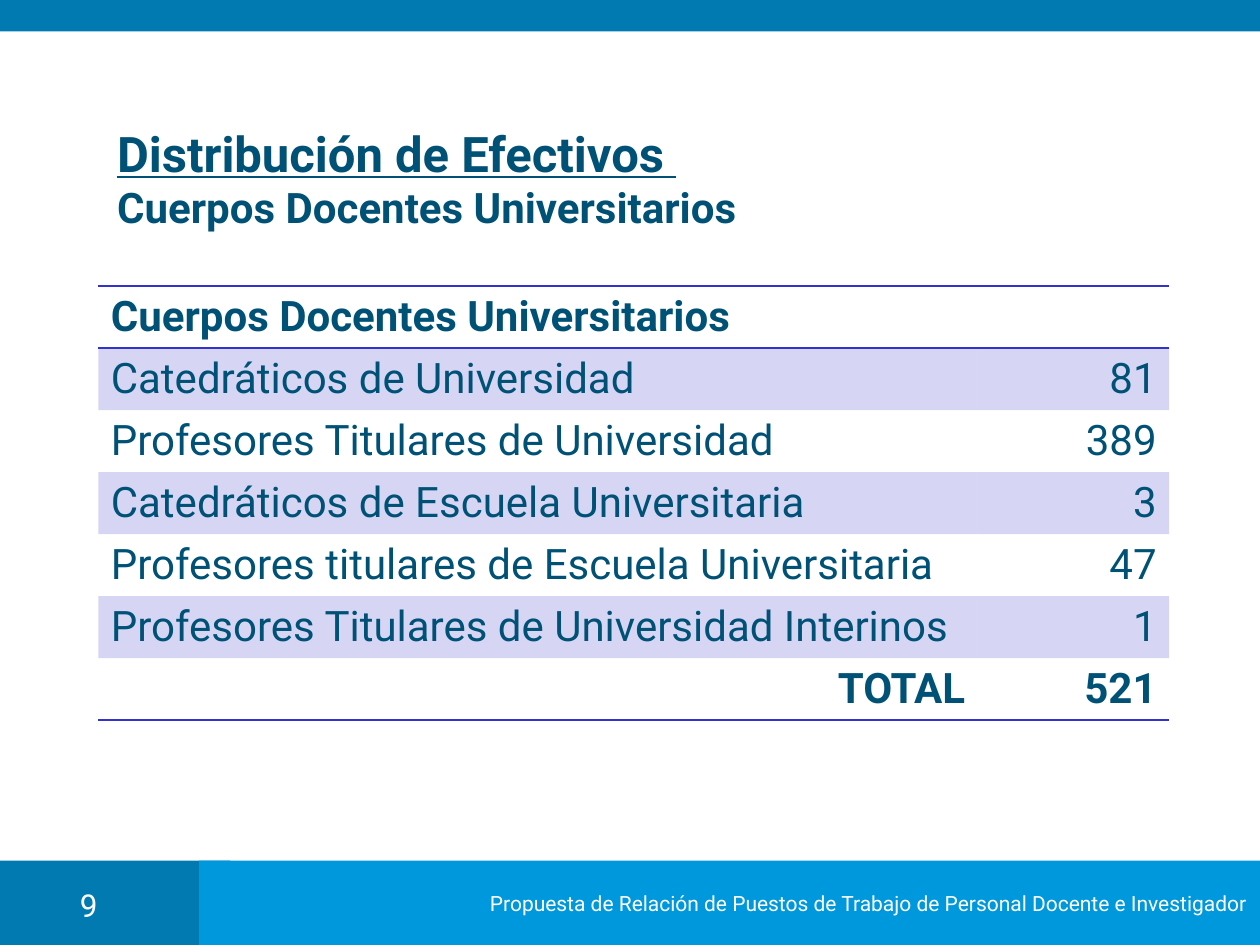
from lxml import etree
from pptx import Presentation
from pptx.dml.color import RGBColor
from pptx.enum.shapes import MSO_SHAPE
from pptx.enum.text import MSO_ANCHOR, MSO_AUTO_SIZE, PP_ALIGN
from pptx.oxml.ns import qn
from pptx.util import Inches, Pt

RECT = MSO_SHAPE.RECTANGLE
MIDDLE = MSO_ANCHOR.MIDDLE
LEFT, CENTER, RIGHT = PP_ALIGN.LEFT, PP_ALIGN.CENTER, PP_ALIGN.RIGHT
FONT = "Roboto"
HEX = {"dark": "007AB1", "light": "0098DC", "text": "005176",
       "white": "FFFFFF", "rule": "3333CC"}
COLOR = {name: RGBColor.from_string(code) for name, code in HEX.items()}


def style(font, size, color, bold=False):
    font.name, font.size, font.bold = FONT, Pt(size), bold
    font.color.rgb = COLOR[color]


def border(cell, sides):
    """Rule the given sides of a cell and clear the others."""
    props = cell._tc.get_or_add_tcPr()
    for side in "LRTB":
        line = etree.SubElement(props, qn(f"a:ln{side}"), w=str(Pt(1)))
        if side in sides:
            fill = etree.SubElement(line, qn("a:solidFill"))
            etree.SubElement(fill, qn("a:srgbClr"), val=HEX["rule"])
        else:
            etree.SubElement(line, qn("a:noFill"))


prs = Presentation()
prs.slide_width, prs.slide_height = Inches(10), Inches(7.5)
slide = prs.slides.add_slide(prs.slide_layouts[5])
shapes = slide.shapes

# Bars at the foot and the top
bars = []
for x, y, w, h, color in [(0, 6.83, 1.83, 0.67, "dark"),
                          (1.58, 6.83, 8.42, 0.67, "light"),
                          (0, 0, 10, 0.25, "dark")]:
    bar = shapes.add_shape(RECT, Inches(x), Inches(y), Inches(w), Inches(h))
    bar.shadow.inherit = False
    bar.fill.solid()
    bar.fill.fore_color.rgb = COLOR[color]
    bar.line.fill.background()
    bars.append(bar)

# Footer text
frame = bars[1].text_frame
frame.word_wrap = False
frame.vertical_anchor = MIDDLE
para = frame.paragraphs[0]
para.text = ("Propuesta de Relación de Puestos de Trabajo "
             "de Personal Docente e Investigador")
para.alignment = RIGHT
style(para.font, 12, "white")

# Title
title = shapes.title
title.left, title.top = Inches(0.83), Inches(1.2)
title.width, title.height = Inches(8.35), Inches(0.42)
frame = title.text_frame
frame.auto_size = MSO_AUTO_SIZE.NONE
frame.vertical_anchor = MIDDLE
para = frame.paragraphs[0]
para.alignment = LEFT
head = para.add_run()
head.text = "Distribución de Efectivos "
style(head.font, 28, "text", True)
head.font.underline = True
para.add_line_break()
sub = para.add_run()
sub.text = "Cuerpos Docentes Universitarios"
style(sub.font, 24, "text", True)

# Staff table
rows = [("Cuerpos Docentes Universitarios", ""),
        ("Catedráticos de Universidad", "81"),
        ("Profesores Titulares de Universidad", "389"),
        ("Catedráticos de Escuela Universitaria", "3"),
        ("Profesores titulares de Escuela Universitaria", "47"),
        ("Profesores Titulares de Universidad Interinos", "1"),
        ("TOTAL", "521")]
last = len(rows) - 1
rules = {0: "TB", 1: "T", last: "B"}
table = shapes.add_table(len(rows), 2, Inches(0.78), Inches(2.27),
                         Inches(8.5), Inches(0.49 * len(rows))).table
table.first_row = table.horz_banding = False
table.columns[0].width, table.columns[1].width = Inches(6.98), Inches(1.52)
for r, row in enumerate(rows):
    table.rows[r].height = Inches(0.49)
    for c, text in enumerate(row):
        cell = table.cell(r, c)
        border(cell, rules.get(r, ""))
        if r % 2:
            cell.fill.solid()
            cell.fill.fore_color.rgb = COLOR["rule"]
            shade = cell._tc.tcPr.find(qn("a:solidFill"))[0]
            etree.SubElement(shade, qn("a:alpha"), val="20000")
        else:
            cell.fill.background()
        para = cell.text_frame.paragraphs[0]
        para.text = text
        para.alignment = RIGHT if c or r == last else LEFT
        style(para.font, 24, "text", r in (0, last))

# Page number
box = shapes.add_textbox(Inches(0.35), Inches(6.98), Inches(0.71), Inches(0.32))
box.text_frame.word_wrap = True
para = box.text_frame.paragraphs[0]
para.text = "9"
para.alignment = CENTER
style(para.font, 18, "white")

prs.save("out.pptx")
